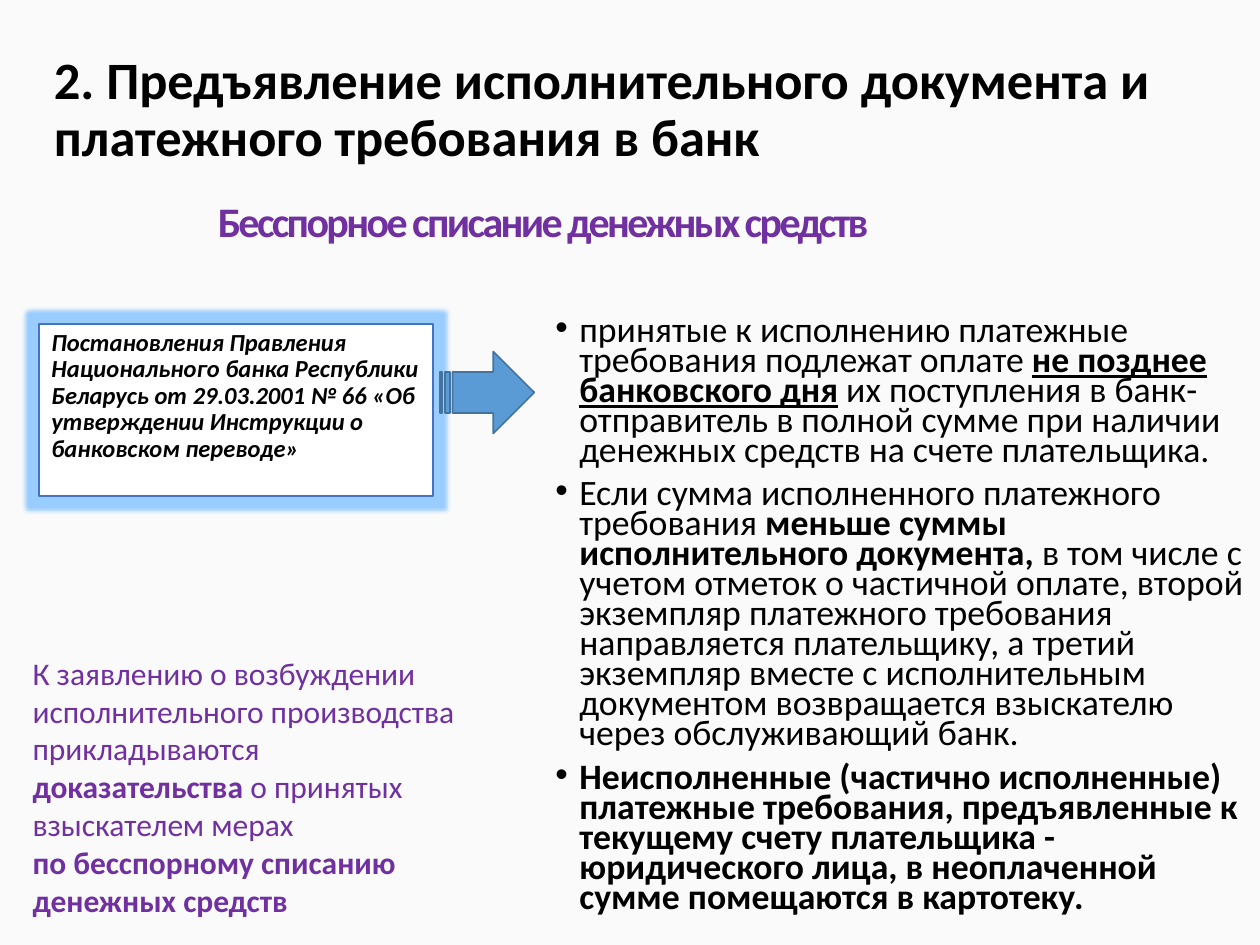
from lxml.etree import SubElement
from pptx import Presentation
from pptx.dml.color import RGBColor
from pptx.enum.shapes import MSO_SHAPE
from pptx.enum.text import MSO_ANCHOR, PP_ALIGN
from pptx.oxml.ns import qn
from pptx.util import Inches, Pt

BACKGROUND = RGBColor(0xFA, 0xFA, 0xFA)
BLACK = RGBColor(0x00, 0x00, 0x00)
WHITE = RGBColor(0xFF, 0xFF, 0xFF)
PURPLE = RGBColor(0x70, 0x30, 0xA0)
BOX_LINE = RGBColor(0x44, 0x72, 0xC4)
ARROW_FILL = RGBColor(0x5B, 0x9B, 0xD5)
ARROW_LINE = RGBColor(0x43, 0x73, 0x9E)
GLOW = RGBColor(0x99, 0xCC, 0xFF)

PLAIN, BOLD, UNDERLINED = "plain", "bold", "underlined"

RULES = [
    [("принятые к исполнению платежные требования подлежат оплате ", PLAIN),
     ("не позднее банковского дня", UNDERLINED),
     (" их поступления в банк-отправитель в полной сумме при наличии "
      "денежных средств на счете плательщика.", PLAIN)],
    [("Если сумма исполненного платежного требования ", PLAIN),
     ("меньше суммы исполнительного документа,", BOLD),
     (" в том числе с учетом отметок о частичной оплате, второй экземпляр "
      "платежного требования направляется плательщику, а третий экземпляр "
      "вместе с исполнительным документом возвращается взыскателю через "
      "обслуживающий банк.", PLAIN)],
    [("Неисполненные (частично исполненные) платежные требования, "
      "предъявленные к текущему счету плательщика - юридического лица, "
      "в неоплаченной сумме помещаются в картотеку.", BOLD)],
]

EVIDENCE = [
    [("К заявлению о возбуждении", PLAIN)],
    [("исполнительного производства", PLAIN)],
    [("прикладываются", PLAIN)],
    [("доказательства", BOLD), (" о принятых", PLAIN)],
    [("взыскателем мерах", PLAIN)],
    [("по бесспорному списанию", BOLD)],
    [("денежных средств", BOLD)],
]


class SlideBuilder:
    font_name = "Calibri"

    def __init__(self, presentation):
        self.slide = presentation.slides.add_slide(presentation.slide_layouts[6])
        background = self.slide.background.fill
        background.solid()
        background.fore_color.rgb = BACKGROUND

    def fill_text(self, frame, paragraphs, size, color, line_spacing=1.0,
                  space_before=0, bulleted=False, italic=False, tracking=0):
        frame.word_wrap = True
        for index, pieces in enumerate(paragraphs):
            paragraph = frame.paragraphs[0] if index == 0 else frame.add_paragraph()
            paragraph.alignment = PP_ALIGN.LEFT
            paragraph.line_spacing = line_spacing
            if index:
                paragraph.space_before = Pt(space_before)
            if bulleted:
                self.add_bullet(paragraph)
            paragraph.font.name = self.font_name
            paragraph.font.size = Pt(size)
            paragraph.font.color.rgb = color
            paragraph.font.italic = italic
            styles = {style for _, style in pieces}
            if styles == {BOLD}:
                paragraph.font.bold = True
            for text, style in pieces:
                run = paragraph.add_run()
                run.text = text
                if len(styles) > 1:
                    run.font.bold = style != PLAIN
                    run.font.underline = style == UNDERLINED
                if tracking:
                    run._r.get_or_add_rPr().set("spc", str(round(tracking * 100)))

    def add_bullet(self, paragraph):
        properties = paragraph._p.get_or_add_pPr()
        properties.set("marL", str(Inches(0.19)))
        properties.set("indent", str(-Inches(0.19)))
        SubElement(properties, qn("a:buFont"), typeface="Arial")
        SubElement(properties, qn("a:buChar"), char="•")

    def add_text(self, left, top, width, height, paragraphs, size, color, **style):
        box = self.slide.shapes.add_textbox(
            Inches(left), Inches(top), Inches(width), Inches(height))
        self.fill_text(box.text_frame, paragraphs, size, color, **style)
        return box.text_frame

    def add_shape(self, preset, left, top, width, height, fill, line):
        shape = self.slide.shapes.add_shape(
            preset, Inches(left), Inches(top), Inches(width), Inches(height))
        shape.shadow.inherit = False
        shape.fill.solid()
        shape.fill.fore_color.rgb = fill
        shape.line.color.rgb = line
        shape.line.width = Pt(1)
        return shape

    def add_glow(self, shape, color, radius):
        effects = shape._element.spPr.find(qn("a:effectLst"))
        glow = SubElement(effects, qn("a:glow"), rad=str(Pt(radius)))
        SubElement(glow, qn("a:srgbClr"), val=str(color))


def main():
    presentation = Presentation()
    presentation.slide_width = Inches(10)
    presentation.slide_height = Inches(7.5)
    builder = SlideBuilder(presentation)

    title = builder.add_text(
        0.33, 0, 9.4, 1.77,
        [[("2. Предъявление исполнительного документа и платежного "
           "требования в банк", BOLD)]],
        30, BLACK, line_spacing=0.9)
    title.vertical_anchor = MSO_ANCHOR.BOTTOM
    title.margin_bottom = Inches(0.44)

    builder.add_text(4.31, 2.48, 5.69, 5.02, RULES, 20.4, BLACK,
                     line_spacing=0.7, space_before=7.5, bulleted=True)

    regulation = builder.add_shape(
        MSO_SHAPE.RECTANGLE, 0.31, 2.57, 3.13, 1.37, WHITE, BOX_LINE)
    builder.add_glow(regulation, GLOW, 5)
    regulation.text_frame.vertical_anchor = MSO_ANCHOR.TOP
    builder.fill_text(
        regulation.text_frame,
        [[("Постановления Правления Национального банка Республики Беларусь "
           "от 29.03.2001 № 66 «Об утверждении Инструкции о банковском "
           "переводе»", BOLD)]],
        14, BLACK, line_spacing=0.9, italic=True)

    builder.add_text(1.63, 1.5, 6.32, 0.51,
                     [[("Бесспорное списание денежных средств", BOLD)]],
                     24, PURPLE, tracking=-1.5)
    builder.add_text(0.16, 5.14, 3.65, 2.22, EVIDENCE, 18, PURPLE)
    builder.add_shape(MSO_SHAPE.STRIPED_RIGHT_ARROW, 3.49, 2.79, 0.75, 0.65,
                      ARROW_FILL, ARROW_LINE)

    presentation.save("out.pptx")


if __name__ == "__main__":
    main()
